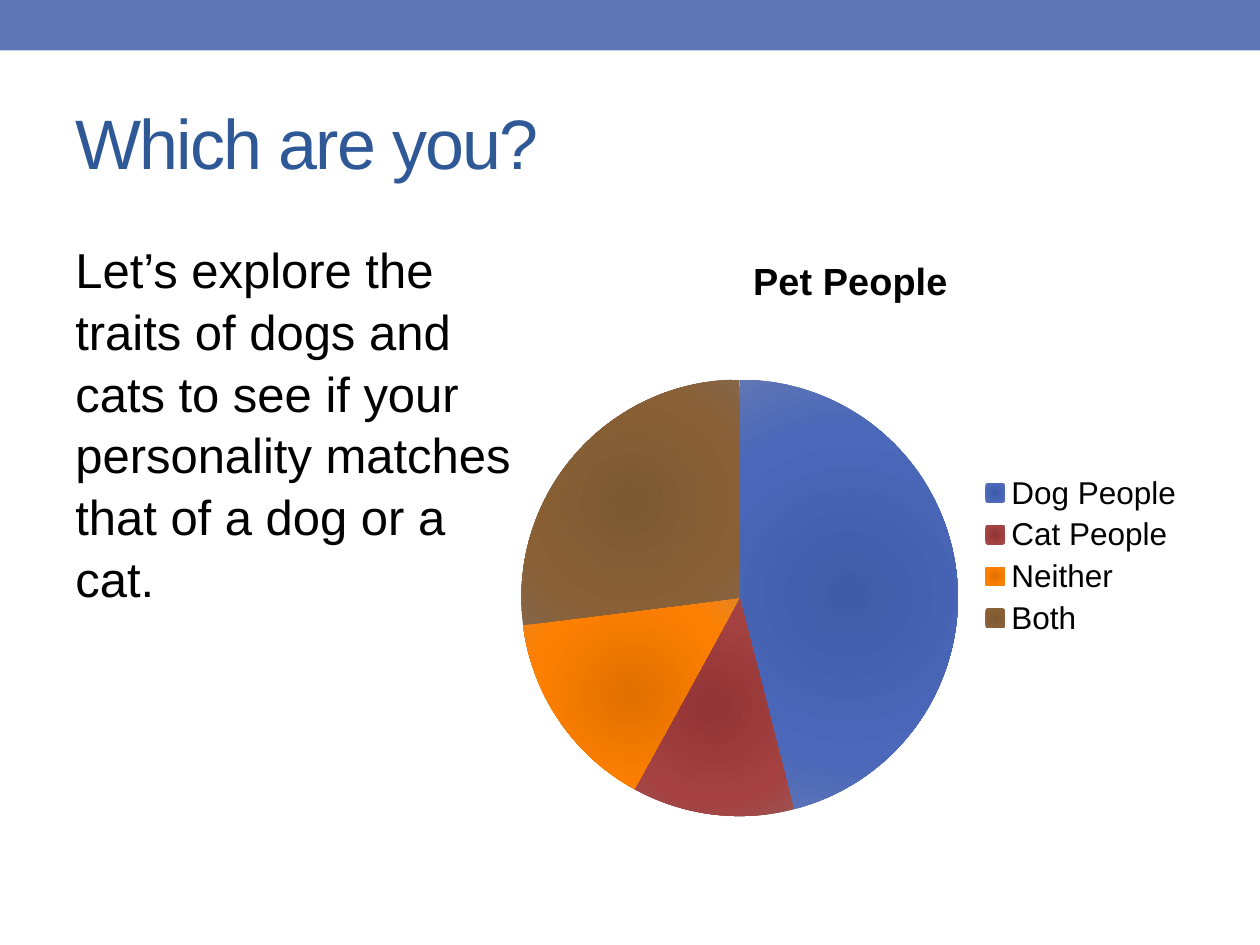
from lxml.etree import SubElement
from pptx import Presentation
from pptx.chart.data import CategoryChartData
from pptx.dml.color import RGBColor
from pptx.enum.chart import XL_CHART_TYPE, XL_LEGEND_POSITION
from pptx.enum.shapes import MSO_SHAPE
from pptx.enum.text import MSO_ANCHOR
from pptx.oxml.ns import qn
from pptx.util import Inches, Pt


def color(value):
    return RGBColor.from_string(value)


class SlideBuilder:
    """Hold the style and the current slide, and add each kind of element."""

    font_name = "Arial"
    bar_color = "6076B4"
    title_color = "2F5897"
    text_color = "000000"

    def __init__(self, slide):
        self.slide = slide

    def set_font(self, font, size, value, bold=False):
        font.name = self.font_name
        font.size = Pt(size)
        font.bold = bold
        font.color.rgb = color(value)

    def bar(self, left, top, width, height):
        shape = self.slide.shapes.add_shape(
            MSO_SHAPE.RECTANGLE, Inches(left), Inches(top), Inches(width), Inches(height))
        shape.shadow.inherit = False
        shape.fill.solid()
        shape.fill.fore_color.rgb = color(self.bar_color)
        shape.line.fill.background()

    def text(self, box, content, size, value, anchor=MSO_ANCHOR.TOP,
             line_spacing=1.0, space_before=0, tracking=0):
        shape = self.slide.shapes.add_textbox(*map(Inches, box))
        frame = shape.text_frame
        frame.word_wrap = True
        frame.vertical_anchor = anchor
        paragraph = frame.paragraphs[0]
        paragraph.line_spacing = line_spacing
        paragraph.space_before = Pt(space_before)
        run = paragraph.add_run()
        run.text = content
        self.set_font(run.font, size, value)
        if tracking:
            run.font._element.set("spc", str(tracking * 100))

    def radial_fill(self, point, stops):
        point.format.fill.gradient()
        gradient = point.format.fill._xPr.find(qn("a:gradFill"))
        for child in list(gradient):
            gradient.remove(child)
        stop_list = SubElement(gradient, qn("a:gsLst"))
        for position, value in zip((0, 70, 100), stops):
            stop = SubElement(stop_list, qn("a:gs"), pos=str(position * 1000))
            SubElement(stop, qn("a:srgbClr"), val=value)
        center = SubElement(gradient, qn("a:path"), path="circle")
        SubElement(center, qn("a:fillToRect"), dict.fromkeys("ltrb", "50000"))

    def pie(self, box, title, slices):
        data = CategoryChartData()
        data.categories = [name for name, _, _ in slices]
        data.add_series(title, [value for _, value, _ in slices])
        chart = self.slide.shapes.add_chart(
            XL_CHART_TYPE.PIE, *map(Inches, box), data).chart
        self.set_font(chart.font, 18, self.text_color)
        chart.has_title = True
        run = chart.chart_title.text_frame.paragraphs[0].add_run()
        run.text = title
        self.set_font(run.font, 21.6, self.text_color, bold=True)
        chart.chart_title.include_in_layout = False
        chart.has_legend = True
        chart.legend.position = XL_LEGEND_POSITION.RIGHT
        chart.legend.include_in_layout = False
        plot = chart.plots[0]
        plot.vary_by_categories = True
        for index, (_, _, stops) in enumerate(slices):
            point = plot.series[0].points[index]
            self.radial_fill(point, stops)
            point.format.line.fill.background()


def main():
    presentation = Presentation()
    presentation.slide_width = Inches(10)
    presentation.slide_height = Inches(7.5)
    builder = SlideBuilder(presentation.slides.add_slide(presentation.slide_layouts[6]))
    builder.bar(0, 0, 10, 0.4)
    builder.text((0.5, 0.58, 9, 1.08), "Which are you?", 40, builder.title_color,
                 anchor=MSO_ANCHOR.MIDDLE, tracking=-1)
    builder.text((0.5, 1.83, 3.67, 5.16),
                 "Let’s explore the traits of dogs and cats to see if your "
                 "personality matches that of a dog or a cat.",
                 28, builder.text_color, line_spacing=1.05, space_before=2)
    builder.pie((4, 1.83, 5.5, 5.16), "Pet People", [
        ("Dog People", 46, ("3F5CAA", "4B68BA", "6076B4")),
        ("Cat People", 12, ("913435", "A54141", "9C5252")),
        ("Neither", 15, ("E07000", "FF8000", "E68422")),
        ("Both", 27, ("7C5931", "8A6036", "846648")),
    ])
    presentation.save("out.pptx")


if __name__ == "__main__":
    main()
